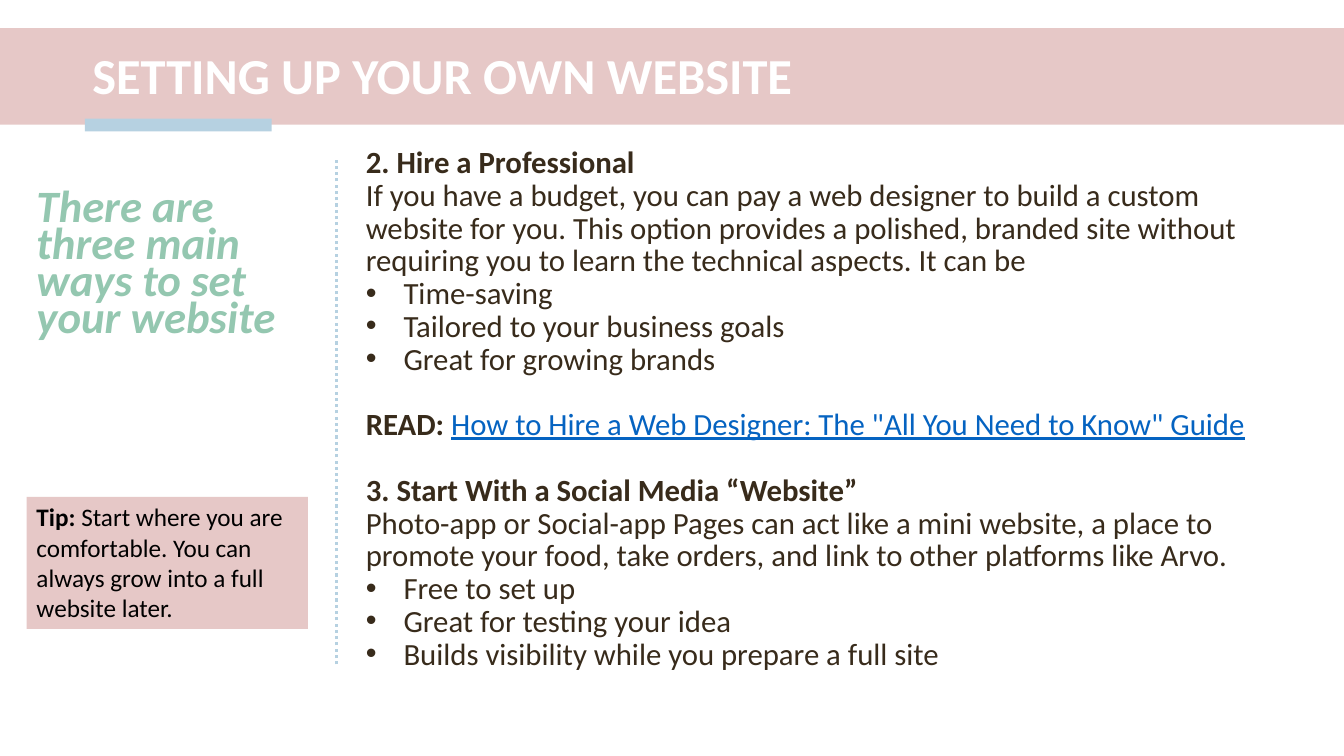
from dataclasses import dataclass
from lxml.etree import SubElement
from pptx import Presentation
from pptx.dml.color import RGBColor
from pptx.enum.dml import MSO_LINE
from pptx.enum.shapes import MSO_CONNECTOR, MSO_SHAPE
from pptx.enum.text import MSO_ANCHOR
from pptx.oxml.ns import qn
from pptx.util import Cm, Pt

ROSE, BLUE, MINT = "E6C8C7", "B6D1E1", "94C7B0"
BROWN, LINK, WHITE, BLACK = "382B1B", "0563C1", "FFFFFF", "000000"


@dataclass
class Run:
    text: str
    bold: bool = False
    color: str = BROWN
    size: float = 22
    italic: bool = False
    under: bool = False


@dataclass
class Para:
    runs: list[Run]
    lead: float | None = None
    gap: float = 0
    bullet: bool = False


@dataclass
class Box:
    left: float
    top: float
    width: float
    height: float

    def place(self) -> tuple[Cm, Cm, Cm, Cm]:
        return Cm(self.left), Cm(self.top), Cm(self.width), Cm(self.height)


def tint(code: str) -> RGBColor:
    return RGBColor.from_string(code)


def write(frame, paras: list[Para]) -> None:
    frame.word_wrap = True
    for i, item in enumerate(paras):
        para = frame.paragraphs[0] if i == 0 else frame.add_paragraph()
        para.space_before = Pt(item.gap)
        if item.lead:
            para.line_spacing = Pt(item.lead)
        if item.bullet:
            props = para._p.get_or_add_pPr()
            props.set("marL", str(Cm(0.95)))
            props.set("indent", str(-Cm(0.95)))
            SubElement(props, qn("a:buFont"), typeface="Arial")
            SubElement(props, qn("a:buChar"), char="•")
        for part in item.runs:
            run = para.add_run()
            run.text = part.text
            font = run.font
            font.name, font.size = "Calibri", Pt(part.size)
            font.bold, font.italic = part.bold, part.italic
            font.underline = part.under
            font.color.rgb = tint(part.color)


def block(slide, box: Box, color: str):
    shape = slide.shapes.add_shape(MSO_SHAPE.RECTANGLE, *box.place())
    shape.shadow.inherit = False
    shape.fill.solid()
    shape.fill.fore_color.rgb = tint(color)
    shape.line.fill.background()
    return shape


def label(slide, box: Box, paras: list[Para], anchor=MSO_ANCHOR.TOP) -> None:
    frame = slide.shapes.add_textbox(*box.place()).text_frame
    frame.vertical_anchor = anchor
    write(frame, paras)


def option(head: str, intro: str, points: list[str], gap: float = 0) -> list[Para]:
    return [
        Para([Run(head, bold=True)], LEAD, gap),
        Para([Run(intro)], LEAD),
        *[Para([Run(point)], LEAD, bullet=True) for point in points],
    ]


LEAD = 23.4

deck = Presentation()
deck.slide_width, deck.slide_height = Cm(33.87), Cm(19.05)
slide = deck.slides.add_slide(deck.slide_layouts[6])

# Title band and accent bar
block(slide, Box(0, 0.71, 33.87, 2.43), ROSE)
block(slide, Box(2.14, 2.99, 4.71, 0.32), BLUE)
label(slide, Box(2.08, 0.86, 30.3, 2.01),
      [Para([Run("SETTING UP YOUR OWN WEBSITE", True, WHITE, 36)])],
      MSO_ANCHOR.MIDDLE)

# Side heading
label(slide, Box(0.67, 4.78, 7.5, 6.58),
      [Para([Run(text, True, MINT, 32, italic=True)], 26.4)
       for text in ("There are", "three main ways to set your website")])

# Options
read = Para([
    Run("READ: ", bold=True),
    Run('How to Hire a Web Designer: The "All You Need to Know" Guide',
        color=LINK, under=True),
], LEAD, LEAD)
hire = option(
    "2. Hire a Professional",
    "If you have a budget, you can pay a web designer to build a custom website "
    "for you. This option provides a polished, branded site without requiring "
    "you to learn the technical aspects. It can be",
    ["Time-saving", "Tailored to your business goals", "Great for growing brands"])
social = option(
    "3. Start With a Social Media “Website”",
    "Photo-app or Social-app Pages can act like a mini website, a place to promote "
    "your food, take orders, and link to other platforms like Arvo.",
    ["Free to set up", "Great for testing your idea",
     "Builds visibility while you prepare a full site"], LEAD)
label(slide, Box(8.97, 3.58, 23.42, 8.05), [*hire, read, *social])

# Dotted divider
rule = slide.shapes.add_connector(
    MSO_CONNECTOR.STRAIGHT, Cm(8.48), Cm(16.74), Cm(8.48), Cm(4.04))
rule.line.color.rgb = tint(BLUE)
rule.line.width = Pt(2.25)
rule.line.dash_style = MSO_LINE.ROUND_DOT
SubElement(rule._element.spPr, qn("a:effectLst"))

# Tip
tip = block(slide, Box(0.67, 12.52, 7.09, 3.33), ROSE).text_frame
tip.vertical_anchor = MSO_ANCHOR.TOP
write(tip, [Para([
    Run("Tip: ", True, BLACK, 18),
    Run("Start where you are comfortable. You can always grow into a full "
        "website later.", False, BLACK, 18),
])])
for para in tip.paragraphs:
    para.alignment = 1

deck.save("out.pptx")
